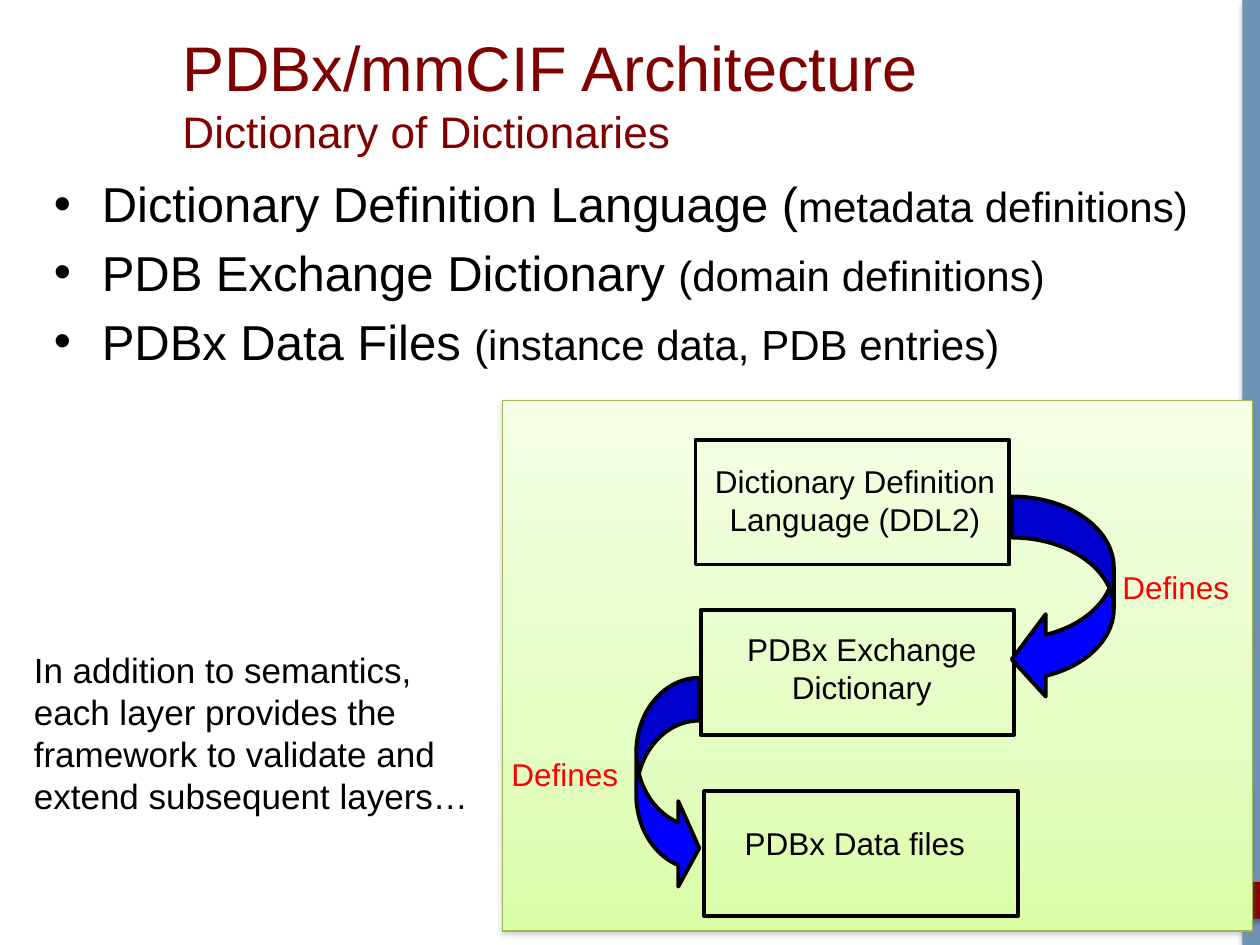
"""Build the PDBx/mmCIF architecture slide."""
from copy import deepcopy

from lxml.etree import SubElement
from pptx import Presentation
from pptx.dml.color import RGBColor
from pptx.enum.shapes import MSO_SHAPE
from pptx.enum.text import MSO_ANCHOR, PP_ALIGN
from pptx.oxml.ns import qn
from pptx.util import Inches, Pt

COLORS = {
    "black": "000000", "maroon": "800000", "steel": "6C95B6", "blue": "0000FF",
    "red": "FF0000", "olive": "98B954", "gray": "808080",
    "green_top": "F5FFE6", "green_middle": "E4FDC2", "green_bottom": "DAFDA7",
}

deck = Presentation()
deck.slide_width, deck.slide_height = Inches(10), Inches(7.5)
page = deck.slides.add_slide(deck.slide_layouts[6])


def add_shape(kind, place, fill=None, line=None, line_width=2.25, shadow=None):
    """Add a preset shape with its fill, outline and optional drop shadow."""
    shape = page.shapes.add_shape(kind, *[Inches(value) for value in place])
    shape.shadow.inherit = False
    if fill:
        shape.fill.solid()
        shape.fill.fore_color.rgb = RGBColor.from_string(COLORS[fill])
    else:
        shape.fill.background()
    if line:
        shape.line.color.rgb = RGBColor.from_string(COLORS[line])
        shape.line.width = Pt(line_width)
    else:
        shape.line.fill.background()
    if shadow:
        color, opacity, distance = shadow
        effects = shape._element.spPr.find(qn("a:effectLst"))
        outer = SubElement(effects, qn("a:outerShdw"), blurRad=str(Pt(3.1)),
                           dist=str(Pt(distance)), dir="5400000", rotWithShape="0")
        tone = SubElement(outer, qn("a:srgbClr"), val=COLORS[color])
        SubElement(tone, qn("a:alpha"), val=str(opacity * 1000))
    return shape


def add_text(paragraphs, place, color="black", align=PP_ALIGN.LEFT,
             anchor=MSO_ANCHOR.TOP, bullet=False, space_after=0):
    """Add a text box; each paragraph is a list of (text, size) spans."""
    box = page.shapes.add_textbox(*[Inches(value) for value in place])
    frame = box.text_frame
    frame.word_wrap = True
    frame.vertical_anchor = anchor
    for index, spans in enumerate(paragraphs):
        para = frame.add_paragraph() if index else frame.paragraphs[0]
        para.alignment = align
        para.space_after = Pt(space_after)
        for text, size in spans:
            if text.startswith("\n"):
                para.add_line_break()
            span = para.add_run()
            span.text = text.strip("\n")
            span.font.name = "Arial"
            span.font.size = Pt(size)
            span.font.color.rgb = RGBColor.from_string(COLORS[color])
        if bullet:
            properties = para._p.get_or_add_pPr()
            properties.set("marL", str(Inches(0.38)))
            properties.set("indent", str(Inches(-0.38)))
            SubElement(properties, qn("a:buFont"), typeface="Arial")
            SubElement(properties, qn("a:buChar"), char="•")


bar_shadow = ("black", 35, 1.8)
add_shape(MSO_SHAPE.RECTANGLE, (9.86, 0, 0.14, 7.5), fill="steel", shadow=bar_shadow)
add_shape(MSO_SHAPE.RECTANGLE, (9.57, 7, 0.48, 0.29), fill="maroon", shadow=bar_shadow)

add_text([[("PDBx/mmCIF Architecture", 36), ("\nDictionary of Dictionaries", 25.2)]],
         (1.35, 0.4, 8.43, 0.67), color="maroon", anchor=MSO_ANCHOR.MIDDLE)
add_text([
    [("Dictionary Definition Language (", 28), ("metadata definitions)", 24)],
    [("PDB Exchange Dictionary ", 28), ("(domain definitions)", 24)],
    [("PDBx Data Files ", 28), ("(instance data, PDB entries)", 24)],
], (0.33, 1.33, 9.67, 4.5), bullet=True, space_after=5.6)

panel = add_shape(MSO_SHAPE.RECTANGLE, (3.99, 3.18, 5.95, 4.21), line="olive",
                  line_width=0.75, shadow=("gray", 38, 1.6))
panel.fill.gradient()
panel.fill.gradient_angle = 270
stop_list = panel._element.spPr.find(qn("a:gradFill")).find(qn("a:gsLst"))
stop_list.append(deepcopy(stop_list[0]))
gradient = [(0, "green_top"), (0.65, "green_middle"), (1, "green_bottom")]
for stop, (position, color) in zip(panel.fill.gradient_stops, gradient):
    stop.position = position
    stop.color.rgb = RGBColor.from_string(COLORS[color])

for left, top in [(5.52, 3.49), (5.56, 4.84), (5.59, 6.28)]:
    add_shape(MSO_SHAPE.RECTANGLE, (left, top, 2.49, 0.99), line="black")

layers = [
    ("Dictionary Definition Language (DDL2)", (5.43, 3.62, 2.71, 0.71)),
    ("PDBx Exchange Dictionary", (5.5, 4.95, 2.68, 0.71)),
    ("PDBx Data files", (5.68, 6.49, 2.21, 0.4)),
]
for label, place in layers:
    add_text([[(label, 18)]], place, align=PP_ALIGN.CENTER)

arrows = [
    (MSO_SHAPE.CURVED_LEFT_ARROW, (8.03, 3.94, 0.81, 1.62), (0.403, 0.807, 0.333)),
    (MSO_SHAPE.CURVED_RIGHT_ARROW, (5.05, 5.38, 0.5, 1.69), (0.678, 1.356, 0.333)),
]
for kind, place, adjustments in arrows:
    arrow = add_shape(kind, place, fill="blue", line="black")
    for index, value in enumerate(adjustments):
        arrow.adjustments[index] = value

for left, top in [(8.81, 4.46), (3.96, 5.94)]:
    add_text([[("Defines", 18)]], (left, top, 1.17, 0.4), color="red")

add_text([[("In addition to semantics, each layer provides the framework to validate "
            "and extend subsequent layers…", 20)]], (0.17, 5.1, 3.71, 1.45))

deck.save("out.pptx")
